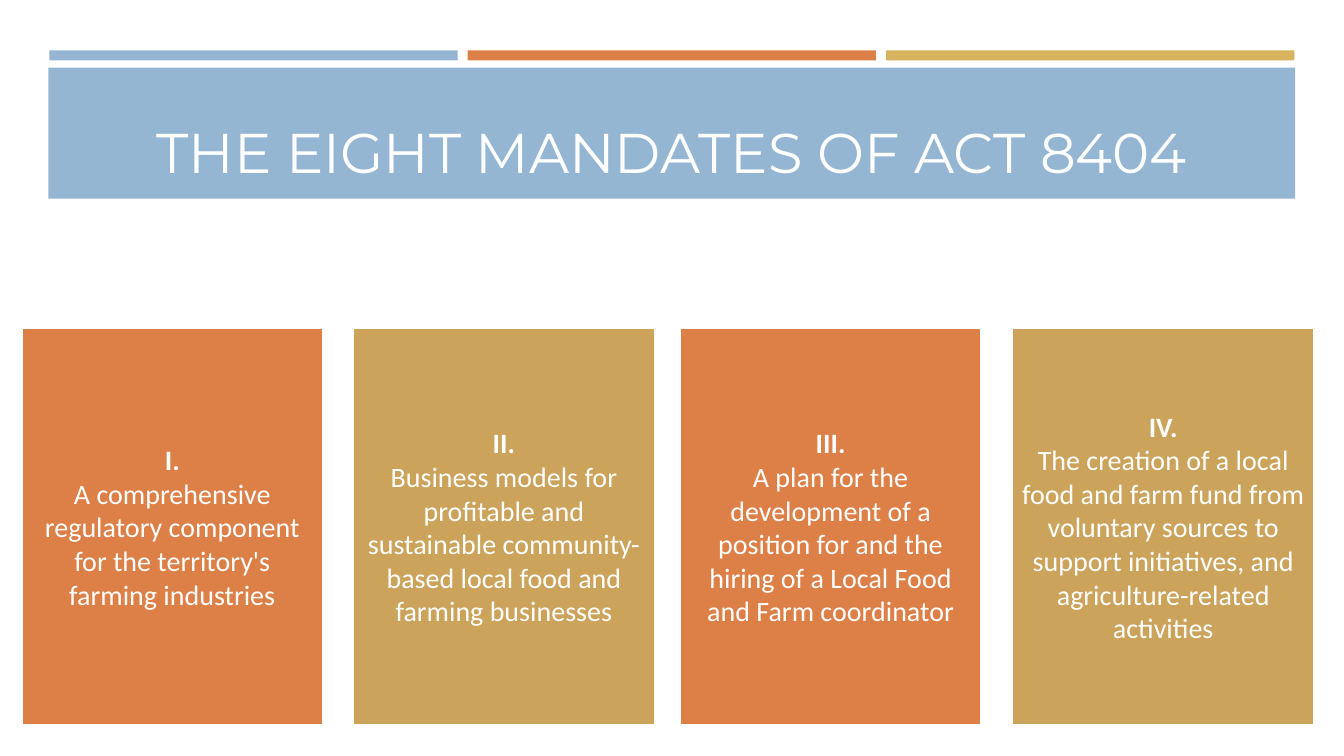
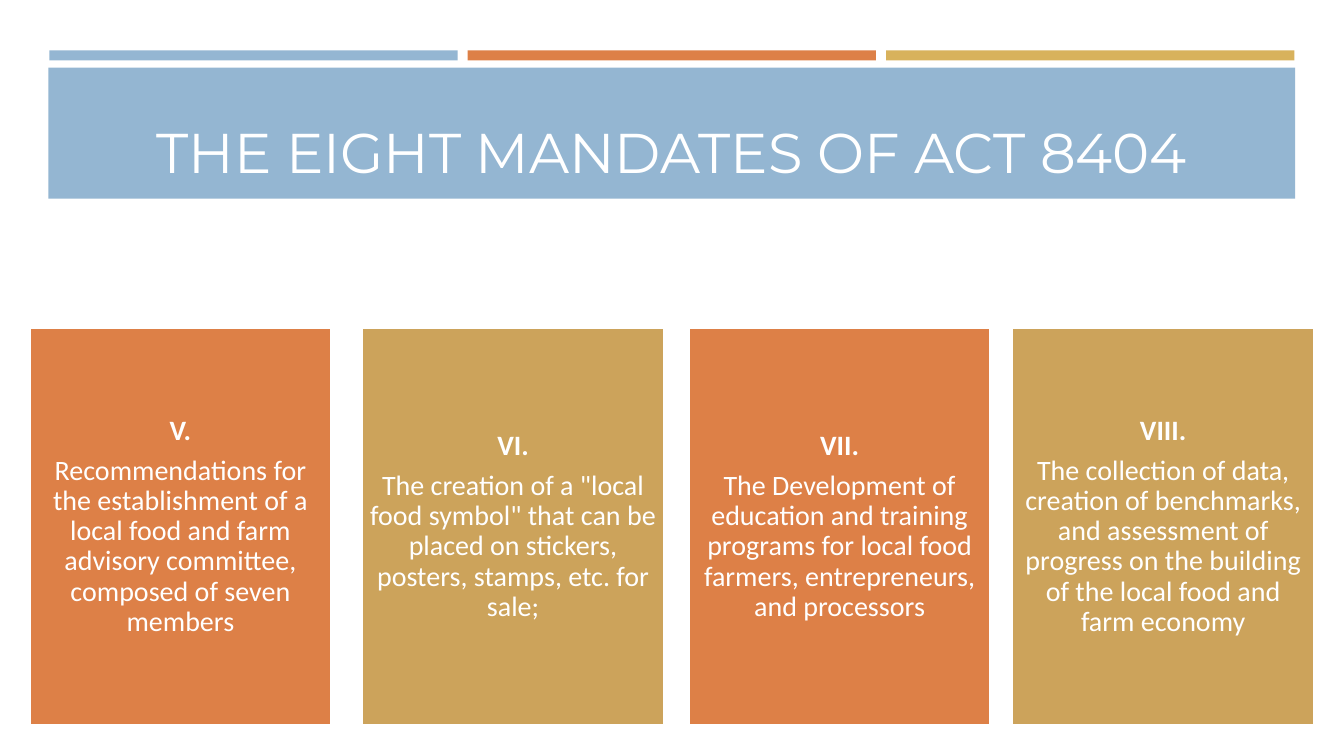
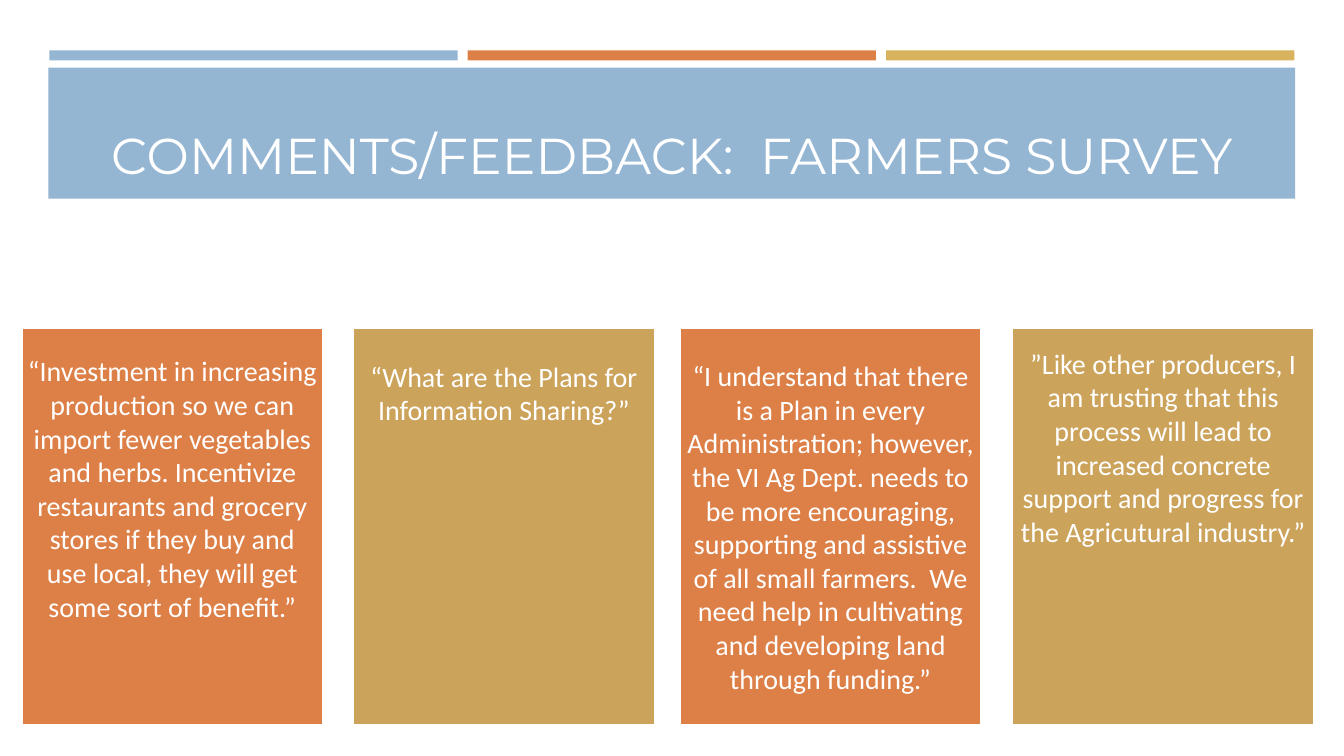
from pptx import Presentation
from pptx.dml.color import RGBColor
from pptx.enum.shapes import MSO_SHAPE as Shape
from pptx.enum.text import MSO_ANCHOR as Anchor, PP_ALIGN as Align
from pptx.util import Inches, Pt

CELL = Inches(0.1)
WHITE, BLUE, ORANGE, GOLD, SAND = "FFFFFF", "94B6D2", "DD8047", "D8B25C", "CCA35B"
STRIPES = [BLUE, ORANGE, GOLD]
CARD_FILLS = [ORANGE, SAND]
CARD_TOP, CARD_WIDTH, CARD_HEIGHT, CARD_INSET = 32.5, 30, 39.5, 0.6
WIDE_START = [2.1, 35, 67.4, 100.4]
SHIFTED_START = [2.9, 35.9, 68.3, 100.4]

SLIDES = [
    {
        "title": "THE EIGHT MANDATES OF ACT 8404", "size": 40,
        "columns": WIDE_START, "spacing": 1, "after": 0,
        "cards": [
            (39.5, ["I.", "A comprehensive regulatory component for the territory's farming industries"]),
            (39.5, ["II.", "Business models for profitable and sustainable community-based local food and farming businesses"]),
            (39.5, ["III.", "A plan for the development of a position for and the hiring of a Local Food and Farm coordinator"]),
            (39.5, ["IV.", "The creation of a local food and farm fund from voluntary sources to support initiatives, and agriculture-related activities"]),
        ],
    },
    {
        "title": "THE EIGHT MANDATES OF ACT 8404", "size": 40,
        "columns": SHIFTED_START, "spacing": 0.9, "after": 7,
        "cards": [
            (39.5, ["V.", "Recommendations for the establishment of a local food and farm advisory committee, composed of seven members"]),
            (39.5, ["VI.", "The creation of a \"local food symbol\" that can be placed on stickers, posters, stamps, etc. for sale;"]),
            (39.5, ["VII.", "The Development of education and training programs for local food farmers, entrepreneurs, and processors"]),
            (39.5, ["VIII.", "The collection of data, creation of benchmarks, and assessment of progress on the building of the local food and farm economy"]),
        ],
    },
    {
        "title": "COMMENTS/FEEDBACK:  FARMERS SURVEY", "size": 36,
        "columns": WIDE_START, "spacing": 1, "after": 6,
        "cards": [
            (31.9, ["“Investment in increasing production so we can import fewer vegetables and herbs. Incentivize restaurants and grocery stores if they buy and use local, they will get some sort of benefit.”"]),
            (12.9, ["“What are the Plans for Information Sharing?”"]),
            (39.5, ["“I understand that there is a Plan in every Administration; however, the VI Ag Dept. needs to be more encouraging, supporting and assistive of all small farmers.  We need help in cultivating and developing land through funding.”"]),
            (23.7, ["”Like other producers, I am trusting that this process will lead to increased concrete support and progress for the Agricutural industry.”"]),
        ],
    },
]


def add_block(page, left, top, width, height, fill):
    block = page.shapes.add_shape(
        Shape.RECTANGLE, *[int(cells * CELL) for cells in (left, top, width, height)])
    block.shadow.inherit = False
    block.fill.solid()
    block.fill.fore_color.rgb = RGBColor.from_string(fill)
    block.line.fill.background()
    return block


def add_text(para, text, font, size, bold=False):
    para.alignment = Align.CENTER
    span = para.add_run()
    span.text = text
    span.font.name = font
    span.font.size = Pt(size)
    span.font.bold = bold
    span.font.color.rgb = RGBColor.from_string(WHITE)


deck = Presentation()
deck.slide_width = int(133.33 * CELL)
deck.slide_height = 75 * CELL

for content in SLIDES:
    page = deck.slides.add_slide(deck.slide_layouts[6])
    for index, fill in enumerate(STRIPES):
        add_block(page, 4.9 + 41.5 * index, 5, 40.5, 1, fill)

    band = add_block(page, 4.8, 6.7, 123.7, 13, BLUE).text_frame
    band.word_wrap = True
    band.vertical_anchor = Anchor.BOTTOM
    band.margin_bottom = int(1.4 * CELL)
    add_text(band.paragraphs[0], content["title"], "Montserrat", content["size"])

    for index, (column, (text_height, lines)) in enumerate(zip(content["columns"], content["cards"])):
        card = add_block(page, column, CARD_TOP, CARD_WIDTH, CARD_HEIGHT, CARD_FILLS[index % 2])
        card.line.color.rgb = RGBColor.from_string(WHITE)
        card.line.width = Pt(2)
        box = card.text_frame
        box.word_wrap = True
        box.vertical_anchor = Anchor.MIDDLE
        box.margin_left = box.margin_right = box.margin_top = int(CARD_INSET * CELL)
        box.margin_bottom = int((CARD_HEIGHT - text_height + CARD_INSET) * CELL)
        for number, line in enumerate(lines):
            para = box.add_paragraph() if number else box.paragraphs[0]
            para.line_spacing = content["spacing"]
            para.space_after = Pt(content["after"])
            add_text(para, line, "Calibri", 20, bold=number < len(lines) - 1)

deck.save("out.pptx")
